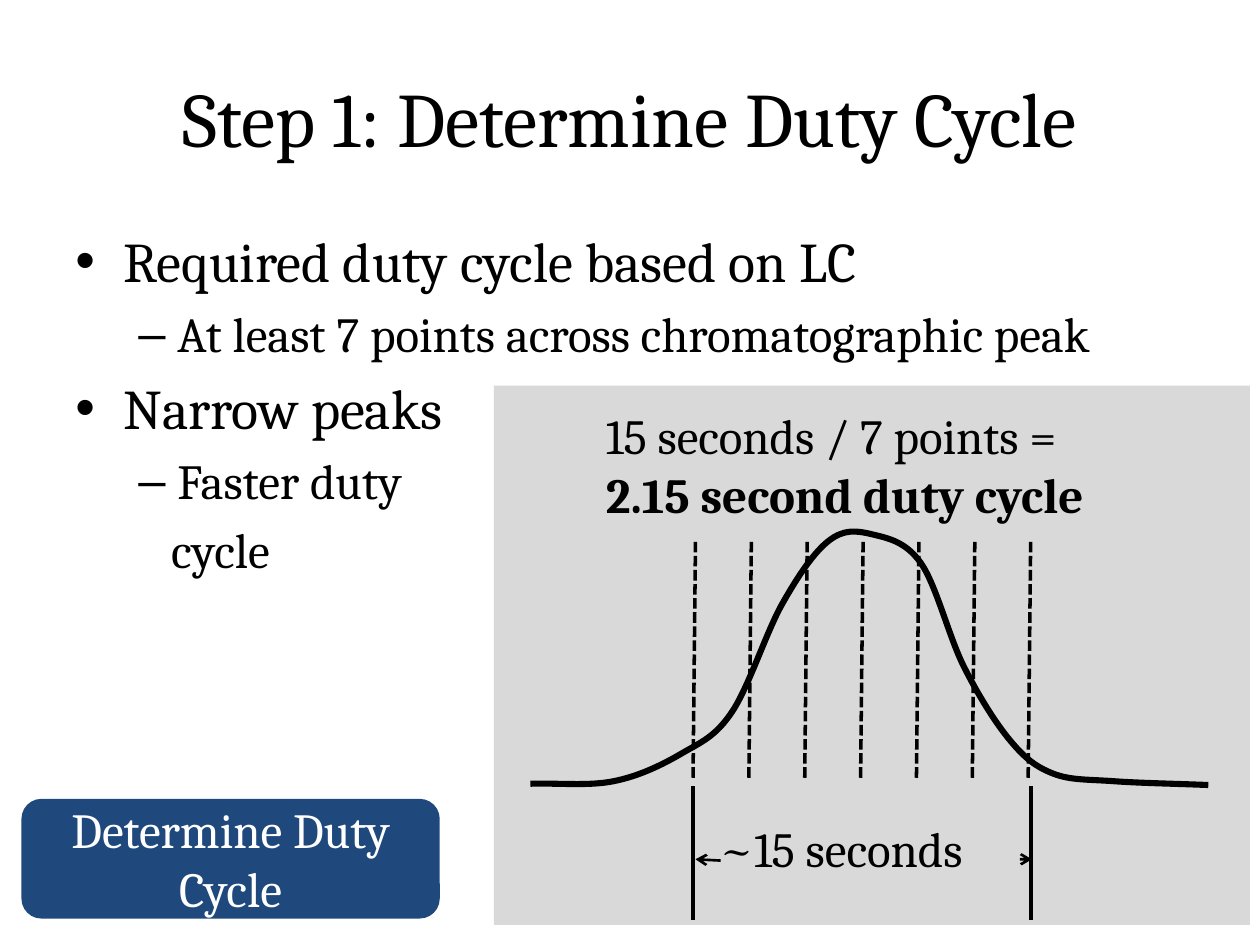
"""Build the slide on choosing a duty cycle for a chromatographic peak."""
from lxml.etree import SubElement
from pptx import Presentation
from pptx.dml.color import RGBColor
from pptx.enum.dml import MSO_LINE
from pptx.enum.shapes import MSO_CONNECTOR, MSO_SHAPE
from pptx.enum.text import MSO_ANCHOR, PP_ALIGN
from pptx.oxml.ns import qn
from pptx.util import Inches, Pt

FONT = "Cambria"
COLORS = {"ink": "000000", "panel": "D9D9D9", "step": "1F497D", "light": "FFFFFF"}
POINTS = [
    ("Required duty cycle based on LC", 32, 0, 0.38, -0.38, "•"),
    ("At least 7 points across chromatographic peak", 28, 1, 0.81, -0.31, "–"),
    ("Narrow peaks", 32, 0, 0.38, -0.38, "•"),
    ("Faster duty", 28, 1, 0.81, -0.31, "–"),
    ("cycle", 28, 1, 0.76, 0, None),
]
PEAK = [
    (4.21, 6.22), (4.87, 6.2), (5.41, 5.98), (5.81, 5.65), (6.21, 4.79),
    (6.58, 4.29), (6.92, 4.24), (7.31, 4.47), (7.65, 5.29), (8.02, 5.88),
    (8.36, 6.14), (8.84, 6.2), (9.59, 6.23),
]


def paint(name):
    return RGBColor.from_string(COLORS[name])


def add_run(para, text, size, color="ink", bold=None):
    run = para.add_run()
    run.text = text
    font = run.font
    font.name, font.size, font.bold = FONT, Pt(size), bold
    font.color.rgb = paint(color)


def add_box(slide, left, top, width, height):
    box = slide.shapes.add_textbox(*map(Inches, (left, top, width, height)))
    box.text_frame.word_wrap = True
    return box.text_frame


def next_para(frame, index):
    return frame.add_paragraph() if index else frame.paragraphs[0]


def add_title(slide, text):
    title = slide.shapes.title
    title.left, title.top = Inches(0.5), Inches(0.3)
    title.width, title.height = Inches(9), Inches(1.25)
    title.text_frame.vertical_anchor = MSO_ANCHOR.MIDDLE
    para = title.text_frame.paragraphs[0]
    para.alignment = PP_ALIGN.CENTER
    add_run(para, text, 44)


def add_list(slide):
    frame = add_box(slide, 0.5, 1.75, 9, 4.95)
    for index, (text, size, level, margin, indent, mark) in enumerate(POINTS):
        para = next_para(frame, index)
        para.level = level
        add_run(para, text, size)
        props = para._p.get_or_add_pPr()
        props.set("marL", str(Inches(margin)))
        props.set("indent", str(Inches(indent)))
        space = SubElement(props, qn("a:spcBef"))
        SubElement(space, qn("a:spcPct")).set("val", "20000")
        if mark:
            SubElement(props, qn("a:buFont")).set("typeface", "Arial")
            SubElement(props, qn("a:buChar")).set("char", mark)


def add_block(slide, kind, color, left, top, width, height):
    block = slide.shapes.add_shape(kind, *map(Inches, (left, top, width, height)))
    block.shadow.inherit = False
    block.fill.solid()
    block.fill.fore_color.rgb = paint(color)
    block.line.fill.background()
    return block


def add_line(slide, start, end, width, dash=None, arrow=False):
    ends = map(Inches, (*start, *end))
    link = slide.shapes.add_connector(MSO_CONNECTOR.STRAIGHT, *ends)
    link.line.color.rgb = paint("ink")
    link.line.width = Pt(width)
    if dash:
        link.line.dash_style = dash
    if arrow:
        SubElement(link.line._get_or_add_ln(), qn("a:tailEnd")).set("type", "arrow")
    SubElement(link._element.spPr, qn("a:effectLst"))


def add_curve(slide, knots, width):
    """Draw a smooth open curve whose tangents follow each knot's neighbours."""
    spots = [(Inches(x), Inches(y)) for x, y in knots]
    maker = slide.shapes.build_freeform(*spots[0])
    maker.add_line_segments(spots[1:], close=False)
    curve = maker.convert_to_shape()
    curve.shadow.inherit = False
    curve.fill.background()
    curve.line.color.rgb = paint("ink")
    curve.line.width = Pt(width)

    local = [(int(p.get("x")), int(p.get("y"))) for p in curve._element.iter(qn("a:pt"))]
    first = [2 * a - b for a, b in zip(local[0], local[1])]
    last = [2 * a - b for a, b in zip(local[-1], local[-2])]
    chain = [first, *local, last]
    for index, step in enumerate(list(curve._element.iter(qn("a:lnTo")))):
        prior, start, end, after = chain[index:index + 4]
        lead = [s + (e - p) // 6 for p, s, e in zip(prior, start, end)]
        trail = [e - (a - s) // 6 for s, e, a in zip(start, end, after)]
        step.tag = qn("a:cubicBezTo")
        for place, (x, y) in enumerate((lead, trail)):
            spot = step.makeelement(qn("a:pt"), {"x": str(x), "y": str(y)})
            step.insert(place, spot)


def add_chart(slide):
    add_block(slide, MSO_SHAPE.RECTANGLE, "panel", 3.92, 3.06, 6, 4.28)
    label = add_box(slide, 5.61, 6.45, 2.56, 0.73)
    add_run(label.paragraphs[0], "~15 seconds", 28)
    for x in (5.5, 8.18):
        add_line(slide, (x, 7.3), (x, 6.24), 2.25)
    add_line(slide, (8.18, 6.82), (8.19, 6.82), 1.5, arrow=True)
    add_line(slide, (5.72, 6.83), (5.52, 6.82), 1.5, arrow=True)
    for index in range(7):
        x = 5.52 + index * 2.66 / 6
        add_line(slide, (x, 4.3), (x - 0.02, 6.19), 2, MSO_LINE.SQUARE_DOT)
    add_curve(slide, PEAK, 3.5)
    result = add_box(slide, 4.71, 3.17, 4.38, 1.02)
    lines = [("15 seconds / 7 points =", None), ("2.15 second duty cycle", True)]
    for index, (text, bold) in enumerate(lines):
        add_run(next_para(result, index), text, 28, bold=bold)


def add_step(slide, text):
    block = add_block(slide, MSO_SHAPE.ROUNDED_RECTANGLE, "step", 0.17, 6.34, 3.32, 0.95)
    block.text_frame.vertical_anchor = MSO_ANCHOR.MIDDLE
    para = block.text_frame.paragraphs[0]
    para.alignment = PP_ALIGN.CENTER
    add_run(para, text, 28, "light")


def main():
    deck = Presentation()
    deck.slide_width, deck.slide_height = Inches(10), Inches(7.5)
    slide = deck.slides.add_slide(deck.slide_layouts[5])
    add_title(slide, "Step 1: Determine Duty Cycle")
    add_list(slide)
    add_chart(slide)
    add_step(slide, "Determine Duty Cycle")
    deck.save("out.pptx")


if __name__ == "__main__":
    main()
